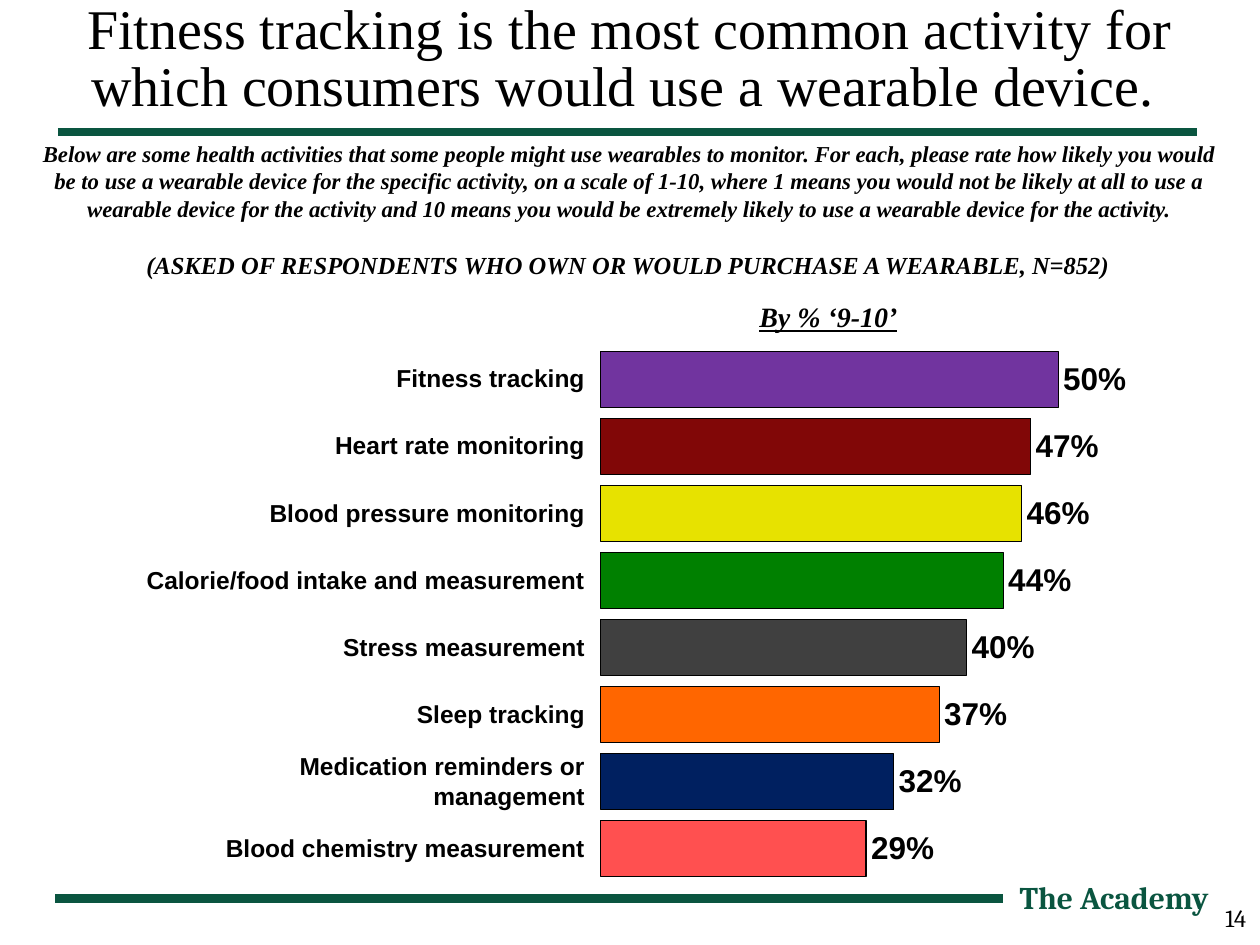
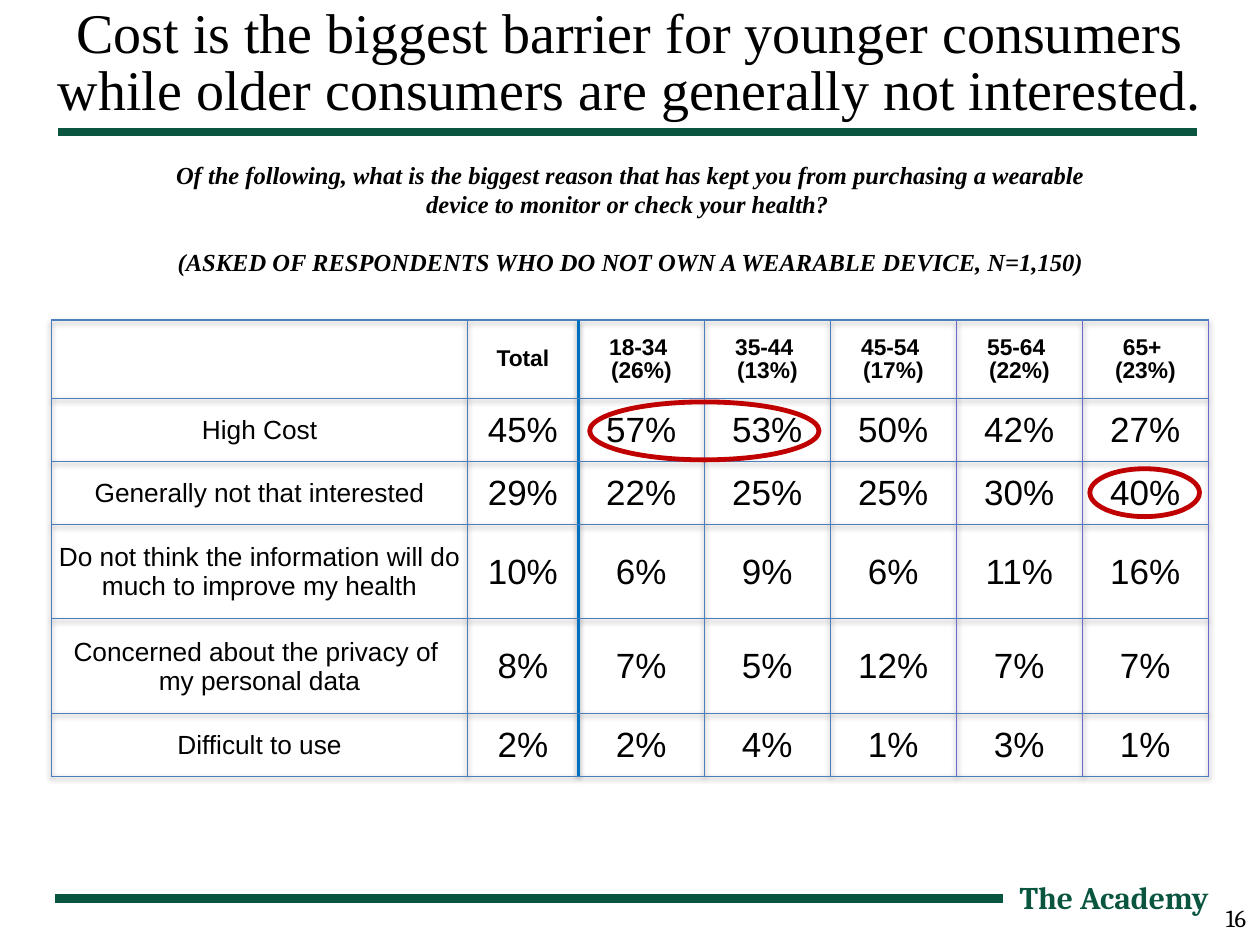
"""Build two survey slides on wearable devices: a bar chart and a table."""
from lxml import etree
from pptx import Presentation
from pptx.chart.data import CategoryChartData
from pptx.dml.color import RGBColor
from pptx.enum.chart import XL_CHART_TYPE, XL_LABEL_POSITION
from pptx.enum.shapes import MSO_CONNECTOR, MSO_SHAPE
from pptx.enum.text import MSO_ANCHOR, MSO_AUTO_SIZE, PP_ALIGN
from pptx.oxml import parse_xml
from pptx.oxml.ns import nsdecls, qn
from pptx.util import Inches, Pt

GREEN, BLACK, RED = "0A5540", "000000", "C00000"
BLUE, VIOLET, THICK = "4B7EBC", "6B6BCF", "0070C0"
SERIF, SANS, BRAND = "Times New Roman", "Arial", "Cambria"
MID = MSO_ANCHOR.MIDDLE


def hue(code):
    return RGBColor.from_string(code)


def write(host, text, box=None, face=SANS, size=14, color=BLACK, bold=False,
          slant=False, under=False, align=PP_ALIGN.CENTER,
          anchor=MSO_ANCHOR.TOP, gap=0, lead=None):
    if box:
        host = host.shapes.add_textbox(*map(Inches, box)).text_frame
    host.word_wrap = True
    host.auto_size = MSO_AUTO_SIZE.NONE
    host.vertical_anchor = anchor
    for line in text.split("\n"):
        para = host.add_paragraph() if host.text else host.paragraphs[0]
        para.alignment = align
        para.space_before = Pt(gap)
        para.line_spacing = lead
        run = para.add_run()
        run.text = line
        font = run.font
        font.name, font.size, font.color.rgb = face, Pt(size), hue(color)
        font.bold, font.italic, font.underline = bold, slant, under
    return host


deck = Presentation()
deck.slide_width, deck.slide_height = Inches(10), Inches(7.5)

pages = [
    ("14", -0.02,
     "Fitness tracking is the most common activity for which consumers would "
     "use a wearable device. ",
     (0.23, 1.06, 9.51, 1.21), 13,
     "Below are some health activities that some people might use wearables to "
     "monitor. For each, please rate how likely you would be to use a wearable "
     "device for the specific activity, on a scale of 1-10, where 1 means you "
     "would not be likely at all to use a wearable device for the activity and "
     "10 means you would be extremely likely to use a wearable device for the "
     "activity.",
     "(ASKED OF RESPONDENTS WHO OWN OR WOULD PURCHASE A WEARABLE, N=852)"),
    ("16", 0.01,
     "Cost is the biggest barrier for younger consumers while older consumers "
     "are generally not interested.",
     (1.23, 1.22, 7.55, 1.04), 14,
     "Of the following, what is the biggest reason that has kept you from "
     "purchasing a wearable device to monitor or check your health? ",
     "(ASKED OF RESPONDENTS WHO DO NOT OWN A WEARABLE DEVICE, N=1,150)"),
]
rules = [(0.46, 9.5, 1.05, 4.5), (0.44, 7.96, 7.13, 5)]

for number, top, head, area, size, query, base in pages:
    slide = deck.slides.add_slide(deck.slide_layouts[5])
    slide.background.fill.solid()
    slide.background.fill.fore_color.rgb = hue("FFFFFF")
    title = slide.shapes.title
    title.left, title.top = Inches(0.25), Inches(top)
    title.width, title.height = Inches(9.5), Inches(0.56)
    write(title.text_frame, head, face=SERIF, size=32, lead=0.85)
    for left, right, y, weight in rules:
        rule = slide.shapes.add_connector(
            MSO_CONNECTOR.STRAIGHT, *map(Inches, (left, y, right, y)))
        rule.line.color.rgb, rule.line.width = hue(GREEN), Pt(weight)
        etree.SubElement(rule._element.spPr, qn("a:effectLst"))
    write(slide, "The Academy", (7.87, 6.92, 1.82, 0.4), face=BRAND, size=18,
          color=GREEN, bold=True, align=PP_ALIGN.RIGHT)
    write(slide, number, (8.99, 7.12, 1, 0.34), face=BRAND,
          align=PP_ALIGN.RIGHT)
    frame = write(slide, query, area, face=SERIF, size=size, bold=True,
                  slant=True)
    write(frame, base, face=SERIF, bold=True, slant=True, gap=16)

first, second = deck.slides

bars = [
    ("Fitness tracking", 0.50, "71349F"),
    ("Heart rate monitoring", 0.47, "810707"),
    ("Blood pressure monitoring", 0.46, "E7E200"),
    ("Calorie/food intake and measurement", 0.44, "008000"),
    ("Stress measurement", 0.40, "404040"),
    ("Sleep tracking", 0.37, "FF6600"),
    ("Medication reminders or management", 0.32, "002060"),
    ("Blood chemistry measurement", 0.29, "FF5050"),
]
data = CategoryChartData(number_format="0%")
data.categories = [str(i + 1) for i in range(len(bars))]
data.add_series("Series 1", [share for _, share, _ in bars])
chart = first.shapes.add_chart(
    XL_CHART_TYPE.BAR_CLUSTERED, *map(Inches, (2.45, 2.58, 9.58, 4.56)),
    data).chart
chart.has_legend = chart.has_title = False
chart.font.name, chart.font.size, chart.font.bold = SANS, Pt(14), True
chart.font.color.rgb = hue(BLACK)
chart.category_axis.reverse_order = True
chart.category_axis.visible = chart.value_axis.visible = False
chart.value_axis.has_major_gridlines = False
chart.value_axis.minimum_scale, chart.value_axis.maximum_scale = 0, 1

area = chart._chartSpace.chart.plotArea
for old in area.findall(qn("c:layout")):
    area.remove(old)
area.insert(0, parse_xml(
    f'<c:layout {nsdecls("c")}><c:manualLayout><c:layoutTarget val="inner"/>'
    '<c:xMode val="edge"/><c:yMode val="edge"/><c:x val="0.242"/>'
    '<c:y val="0.036"/><c:w val="0.758"/><c:h val="0.934"/>'
    '</c:manualLayout></c:layout>'))

plot = chart.plots[0]
plot.gap_width, plot.overlap, plot.vary_by_categories = 20, 100, False
plot.has_data_labels = True
marks = plot.data_labels
marks.show_value, marks.position = True, XL_LABEL_POSITION.OUTSIDE_END
marks.number_format, marks.number_format_is_linked = "0%", False
marks.font.name, marks.font.size, marks.font.bold = SANS, Pt(18), True
marks.font.color.rgb = hue(BLACK)

for i, (label, _, shade) in enumerate(bars):
    point = plot.series[0].points[i].format
    point.fill.solid()
    point.fill.fore_color.rgb = hue(shade)
    point.line.color.rgb, point.line.width = hue(BLACK), Pt(0.75)
    write(first, label, (1.05, 2.83 + i * 0.533, 3.69, 0.34), bold=True,
          align=PP_ALIGN.RIGHT, anchor=MID)
write(first, "By % ‘9-10’", (5.68, 2.33, 1.79, 0.37), face=SERIF, size=16,
      bold=True, slant=True, under=True)

rows = [
    ["", "Total", "18-34 \n(26%)", "35-44 \n(13%)", "45-54 \n(17%)",
     "55-64 \n(22%)", "65+ \n(23%)"],
    ["High Cost", "45%", "57%", "53%", "50%", "42%", "27%"],
    ["Generally not that interested", "29%", "22%", "25%", "25%", "30%", "40%"],
    ["Do not think the information will do much to improve my health",
     "10%", "6%", "9%", "6%", "11%", "16%"],
    ["Concerned about the privacy of \nmy personal data",
     "8%", "7%", "5%", "12%", "7%", "7%"],
    ["Difficult to use", "2%", "2%", "4%", "1%", "3%", "1%"],
]
wide = [3.3, 0.88] + [1] * 5
tall = [0.62, 0.5, 0.5, 0.75, 0.75, 0.5]
table = second.shapes.add_table(
    len(rows), len(wide),
    *map(Inches, (0.41, 2.54, sum(wide), sum(tall)))).table
table.first_row = table.horz_banding = False
table._tbl.tblPr.insert(0, parse_xml(
    f'<a:effectLst {nsdecls("a")}><a:outerShdw blurRad="40000" dist="20000" '
    'dir="5400000" rotWithShape="0"><a:srgbClr val="000000">'
    '<a:alpha val="38000"/></a:srgbClr></a:outerShdw></a:effectLst>'))
for col, width in zip(table.columns, wide):
    col.width = Inches(width)
edges = [(BLUE, 0.75)] * 2 + [(THICK, 2.25)] + [(BLUE, 0.75)] * 2
edges += [(VIOLET, 0.75)] * 3

for r, row in enumerate(rows):
    table.rows[r].height = Inches(tall[r])
    for c, text in enumerate(row):
        cell = table.cell(r, c)
        cell.margin_left = cell.margin_right = cell.margin_top = Inches(0.01)
        cell.margin_bottom = 0
        cell.vertical_anchor = MID
        size = 13 if r == 0 else 15 if c == 0 else 20
        if text:
            write(cell.text_frame, text, size=size, bold=r == 0, anchor=None,
                  lead=0.9 if r == 0 else None)
        props = cell._tc.get_or_add_tcPr()
        sides = zip("LRTB", (edges[c], edges[c + 1], edges[0], edges[0]))
        for side, (color, weight) in sides:
            props.append(parse_xml(
                f'<a:ln{side} {nsdecls("a")} w="{Pt(weight)}"><a:solidFill>'
                f'<a:srgbClr val="{color}"/></a:solidFill></a:ln{side}>'))
        cell.fill.background()

for box in [(4.68, 3.19, 1.82, 0.46), (8.65, 3.72, 0.87, 0.38)]:
    ring = second.shapes.add_shape(MSO_SHAPE.OVAL, *map(Inches, box))
    ring.shadow.inherit = False
    ring.fill.background()
    ring.line.color.rgb, ring.line.width = hue(RED), Pt(2.75)

deck.save("out.pptx")
